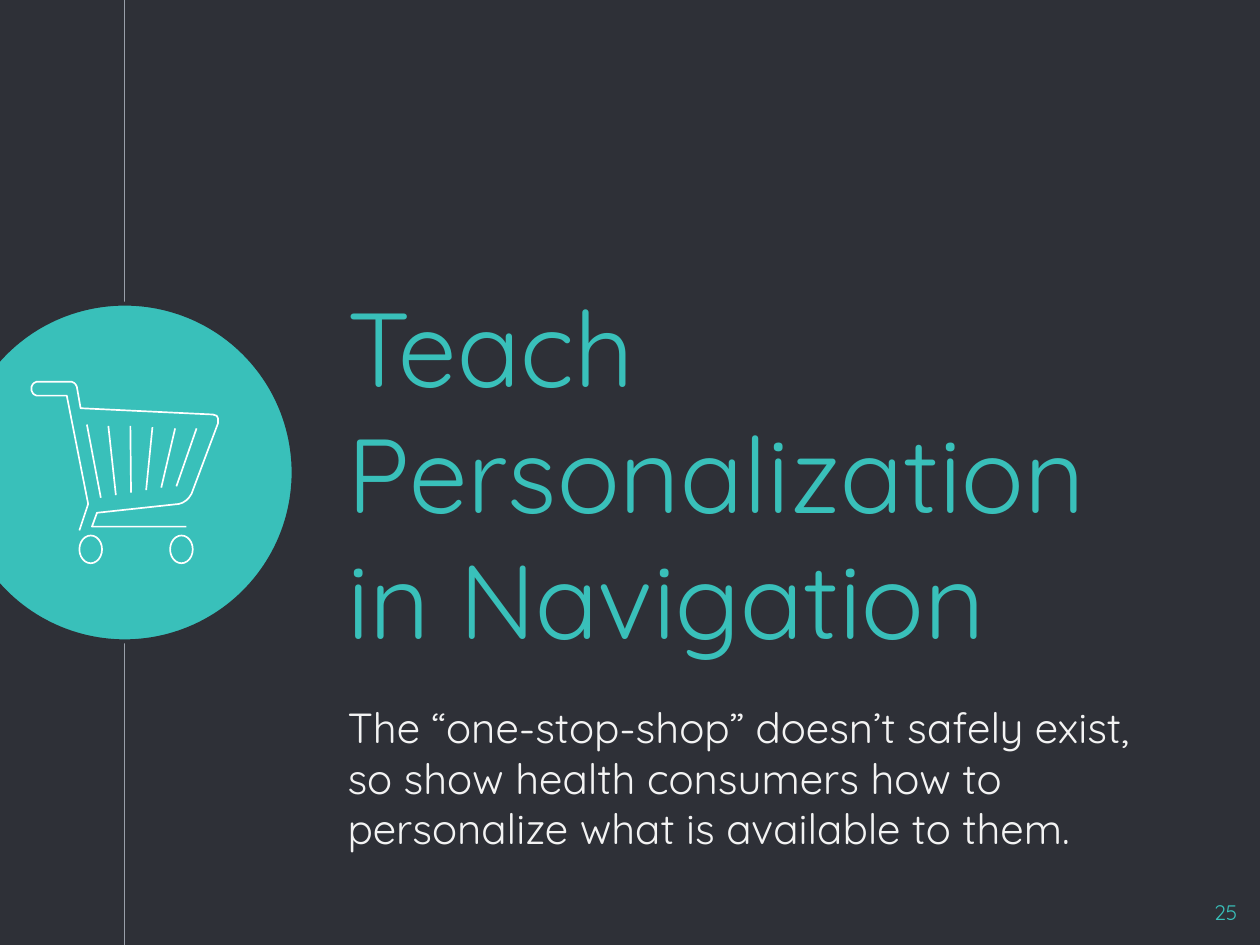
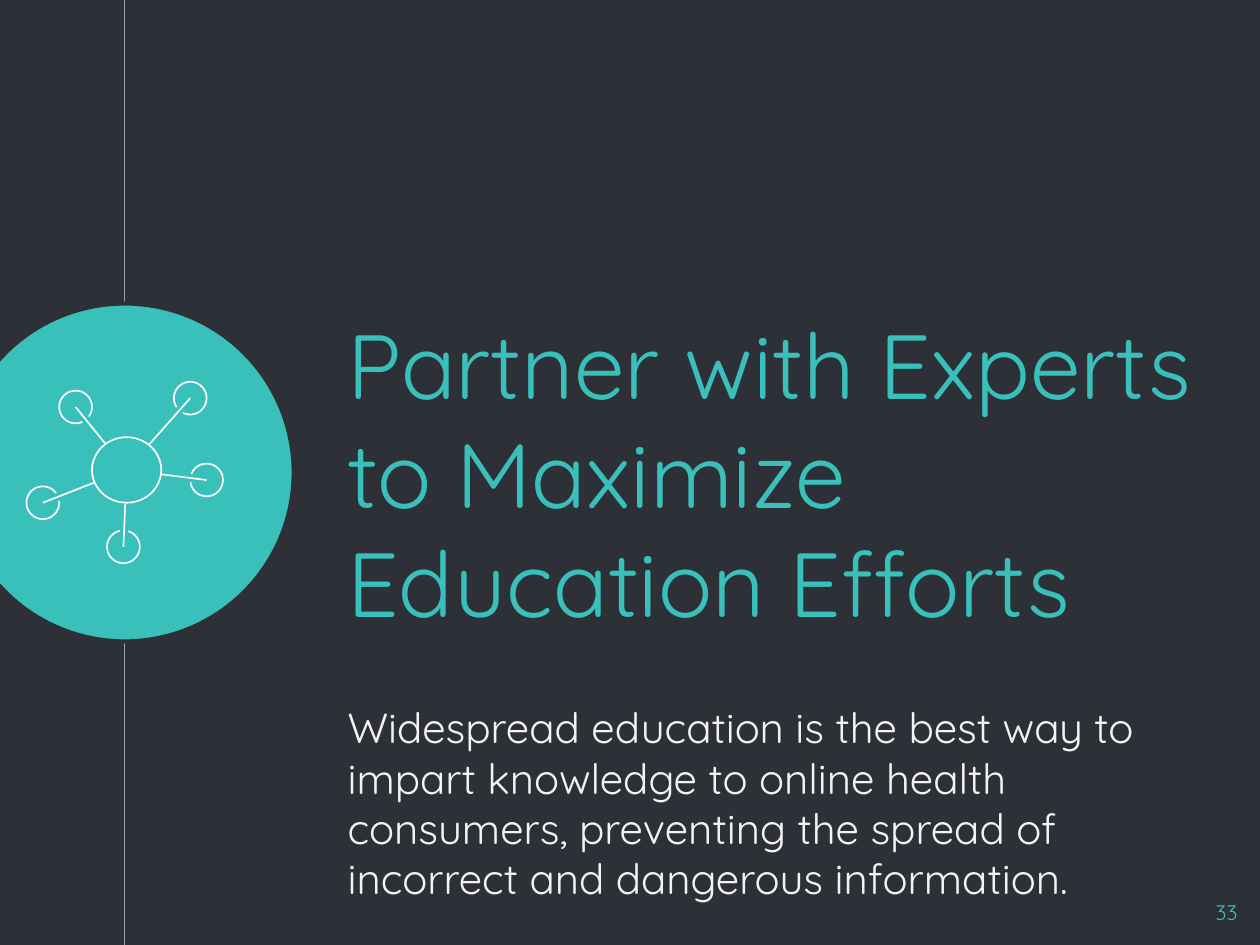
from math import atan2, cos, hypot, radians, sin

from lxml import etree
from pptx import Presentation
from pptx.dml.color import RGBColor
from pptx.enum.shapes import MSO_CONNECTOR, MSO_SHAPE
from pptx.enum.text import MSO_ANCHOR, MSO_AUTO_SIZE, PP_ALIGN
from pptx.oxml.ns import qn
from pptx.util import Pt

PX = 9144  # EMU per px, 100 px to the inch
FINE = 100  # steps per px in outlines
OVAL = MSO_SHAPE.OVAL
STRAIGHT = MSO_CONNECTOR.STRAIGHT
LEFT, RIGHT = PP_ALIGN.LEFT, PP_ALIGN.RIGHT
TOP, MIDDLE = MSO_ANCHOR.TOP, MSO_ANCHOR.MIDDLE
NO_FIT = MSO_AUTO_SIZE.NONE

WIDTH, HEIGHT = 1000, 750
DARK, TEAL, RULE, PALE, WHITE = "2E3037", "39C0BA", "999FA9", "F3F3F3", "FFFFFF"
FONT = "Quicksand"
ICON_LINE = (WHITE, 0.96)


def color(hex_text):
    return RGBColor.from_string(hex_text)


def set_all(target, values):
    for name, value in values.items():
        setattr(target, name, value)


class Painter:
    """Holds the shared style and the slide being drawn."""

    def __init__(self, deck):
        self.deck = deck
        self.page = None

    def new_page(self):
        self.page = self.deck.slides.add_slide(self.deck.slide_layouts[6])
        fill = self.page.background.fill
        fill.solid()
        fill.fore_color.rgb = color(DARK)

    def finish(self, shape, line, fill=None):
        shape.shadow.inherit = False
        if fill:
            shape.fill.solid()
            shape.fill.fore_color.rgb = color(fill)
        else:
            shape.fill.background()
        self.stroke(shape, line)

    def stroke(self, shape, line):
        shape.line.color.rgb = color(line[0])
        shape.line.width = Pt(line[1])

    def oval(self, left, top, width, height, line=ICON_LINE, fill=None):
        frame = [value * PX for value in (left, top, width, height)]
        self.finish(self.page.shapes.add_shape(OVAL, *frame), line, fill)

    def line(self, start, end, line=ICON_LINE):
        ends = [round(value * PX) for value in (*start, *end)]
        connector = self.page.shapes.add_connector(STRAIGHT, *ends)
        etree.SubElement(connector.element.spPr, qn("a:effectLst"))
        self.stroke(connector, line)
        # The effect list must follow the line settings
        connector.element.spPr.append(connector.element.spPr.find(qn("a:effectLst")))

    def outline(self, points):
        first, *rest = [(x * FINE, y * FINE) for x, y in points]
        builder = self.page.shapes.build_freeform(*first, scale=PX / FINE)
        builder.add_line_segments(rest, close=False)
        self.finish(builder.convert_to_shape(), ICON_LINE)

    def text(self, frame, words, size, ink, align=LEFT, anchor=TOP):
        box = self.page.shapes.add_textbox(*[value * PX for value in frame])
        inset = 10 * PX
        set_all(box.text_frame, {
            "word_wrap": True, "auto_size": NO_FIT, "vertical_anchor": anchor,
            "margin_left": inset, "margin_right": inset,
            "margin_top": inset, "margin_bottom": inset,
        })
        para = box.text_frame.paragraphs[0]
        para.alignment = align
        span = para.add_run()
        span.text = words
        set_all(span.font, {"name": FONT, "size": Pt(size)})
        span.font.color.rgb = color(ink)

    def section(self, title, title_size, subtitle, number, draw_icon):
        self.new_page()
        # Timeline rule and icon disc
        self.line((99, 0), (99, HEIGHT), (RULE, 0.75))
        self.oval(-35, 241, 268, 268, (DARK, 2.25), TEAL)
        # Texts
        self.text((266, 290, 690, 169), title, title_size, TEAL, anchor=MIDDLE)
        self.text((266, 547, 659, 150), subtitle, 24, PALE)
        self.text((932, 704, 60, 46), number, 12, TEAL, align=RIGHT)
        draw_icon(self)


def draw_cart(painter):
    # Wheels
    for left in (63, 135):
        painter.oval(left, 425, 18, 22)
    # Frame, from the lower rail round the basket and handle to the rear leg
    painter.outline([
        (148, 418), (73, 418), (77, 407), (142, 400), (145, 399), (148, 397),
        (150, 395), (152, 392), (173, 336), (173, 332), (172, 330), (169, 329),
        (64, 324), (61, 307), (60, 305), (59, 304), (57, 303), (29, 303),
        (27, 304), (26, 305), (25, 307), (25, 310), (26, 312), (27, 313),
        (29, 314), (53, 314), (70, 400), (63, 421),
    ])
    # Basket slats
    slats = [((140, 386), (156, 340)), ((128, 387), (139, 340)),
             ((116, 389), (121, 339)), ((104, 391), (103.5, 338)),
             ((92, 393), (86, 338)), ((80, 395), (69, 337))]
    for bottom, top in slats:
        painter.line(bottom, top)


def draw_network(painter):
    hub_x, hub_y, hub_radius = 100.5, 373, 27
    node_radius, gap, step = 13, 30, 10
    painter.oval(73, 347, 55, 52)
    for x, y in [(151, 316), (60, 323), (34, 399), (98, 434), (164, 381)]:
        # Ring, left open on the side facing the hub
        facing = atan2(hub_y - y, hub_x - x)
        turns = [facing + radians(angle)
                 for angle in range(gap // 2, 361 - gap // 2, step)]
        painter.outline([(x + node_radius * cos(turn), y + node_radius * sin(turn))
                         for turn in turns])
        # Spoke from the node centre to the hub rim
        share = hub_radius / hypot(x - hub_x, y - hub_y)
        painter.line((x, y), (hub_x + share * (x - hub_x), hub_y + share * (y - hub_y)))


def main():
    deck = Presentation()
    set_all(deck, {"slide_width": WIDTH * PX, "slide_height": HEIGHT * PX})
    painter = Painter(deck)
    painter.section(
        "Teach Personalization in Navigation", 60,
        "The “one-stop-shop” doesn’t safely exist, so show health consumers "
        "how to personalize what is available to them.",
        "25", draw_cart)
    painter.section(
        "Partner with Experts to Maximize Education Efforts", 52,
        "Widespread education is the best way to impart knowledge to online "
        "health consumers, preventing the spread of incorrect and dangerous "
        "information.",
        "33", draw_network)
    deck.save("out.pptx")


if __name__ == "__main__":
    main()
